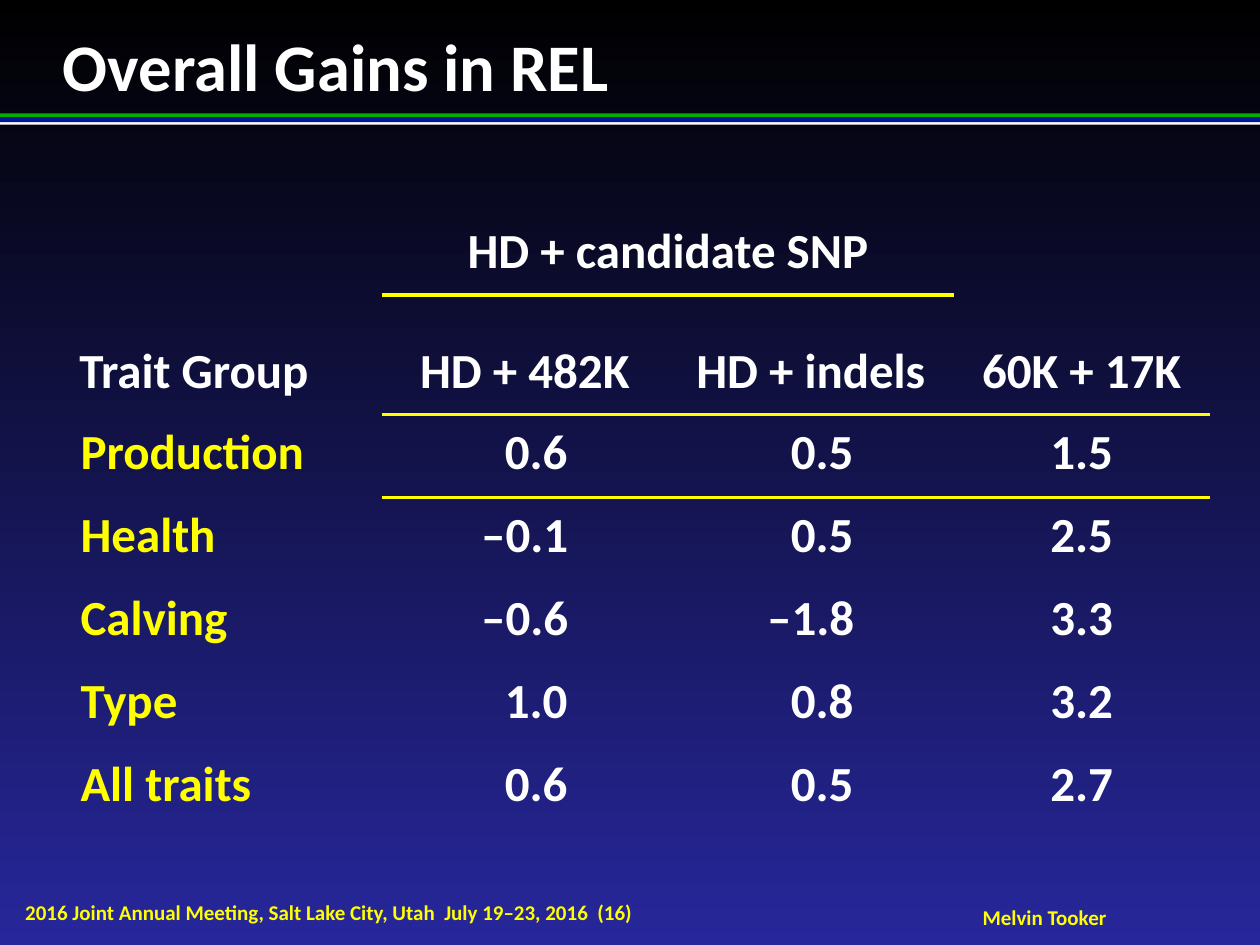
from dataclasses import dataclass

from lxml import etree
from pptx import Presentation
from pptx import util as u
from pptx.dml.color import RGBColor
from pptx.enum import shapes, text
from pptx.oxml import ns


@dataclass(frozen=True)
class Theme:
    font: str = "Calibri"
    white: str = "FFFFFF"
    yellow: str = "FFFF00"
    green: str = "01AF00"
    blue: str = "001799"
    top: str = "000000"
    bottom: str = "27279B"
    title: int = 38
    body: int = 28
    footer: int = 12


THEME = Theme()
LEFT, CENTER = text.PP_ALIGN.LEFT, text.PP_ALIGN.CENTER
MIDDLE, BOTTOM = text.MSO_ANCHOR.MIDDLE, text.MSO_ANCHOR.BOTTOM
NO_GRID_STYLE = "{2D5ABB26-0587-4C30-8999-92F81FD0307C}"
MINUS_SPACE = 0.18  # room left of unsigned values, so digits line up with signed ones

COLUMN_WIDTHS = [2.4, 2.27, 2.27, 2.03]
ROW_HEIGHTS = [0.79, 0.95] + [0.66] * 5
SUBHEADS = ["HD + 482K", "HD + indels", "60K + 17K"]
GAINS = [
    ("Production", "0.6", "0.5", "1.5"),
    ("Health", "–0.1", "0.5", "2.5"),
    ("Calving", "–0.6", "–1.8", "3.3"),
    ("Type", "1.0", "0.8", "3.2"),
    ("All traits", "0.6", "0.5", "2.7"),
]


def set_all(target, values):
    for name, value in values.items():
        setattr(target, name, value)


def margins(left=0, top=0, right=0, bottom=0):
    sides = {"left": left, "top": top, "right": right, "bottom": bottom}
    return {f"margin_{side}": u.Inches(size) for side, size in sides.items()}


def write(para, words, size, color, **para_format):
    set_all(para, para_format)
    span = para.add_run()
    span.text = words
    set_all(span.font, {"name": THEME.font, "size": u.Pt(size), "bold": True})
    span.font.color.rgb = RGBColor.from_string(color)


def add_background(page):
    fill = page.background.fill
    fill.gradient()
    fill.gradient_angle = 270
    for stop, position, color in zip(fill.gradient_stops, (0, 1), (THEME.top, THEME.bottom)):
        stop.position = position
        stop.color.rgb = RGBColor.from_string(color)


def add_stripe(page, top, height, color):
    stripe = page.shapes.add_shape(
        shapes.MSO_SHAPE.RECTANGLE, 0, u.Inches(top), u.Inches(10), u.Inches(height))
    stripe.shadow.inherit = False
    stripe.fill.solid()
    stripe.fill.fore_color.rgb = RGBColor.from_string(color)
    stripe.line.fill.background()


def add_label(page, place, words, size, color, align=LEFT, anchor=MIDDLE, wrap=True):
    box = page.shapes.add_textbox(*(u.Inches(length) for length in place))
    frame = box.text_frame
    set_all(frame, {"word_wrap": wrap, "vertical_anchor": anchor, **margins()})
    write(frame.paragraphs[0], words, size, color, alignment=align)


def fill_cell(cell, words, color=THEME.white, align=CENTER, anchor=MIDDLE, spacing=23, **inset):
    set_all(cell, {"vertical_anchor": anchor, **margins(**inset)})
    write(cell.text_frame.paragraphs[0], words, THEME.body, color,
          alignment=align, line_spacing=u.Pt(spacing))


def add_border(cell, side):
    line = etree.Element(ns.qn(f"a:ln{side}"), w=str(u.Pt(2.25)))
    fill = etree.SubElement(line, ns.qn("a:solidFill"))
    etree.SubElement(fill, ns.qn("a:srgbClr"), val=THEME.yellow)
    cell._tc.get_or_add_tcPr().insert(0, line)


def add_rule(table, row, columns):
    """Draw a line under a row, shared with the cells below it."""
    for column in columns:
        add_border(table.cell(row, column), "B")
        add_border(table.cell(row + 1, column), "T")


def add_gains_table(page):
    frame = page.shapes.add_table(
        len(ROW_HEIGHTS), len(COLUMN_WIDTHS), u.Inches(0.63), u.Inches(1.55),
        u.Inches(sum(COLUMN_WIDTHS)), u.Inches(sum(ROW_HEIGHTS)))
    table = frame.table
    set_all(table, {"first_row": False, "horz_banding": False})
    table._tbl.tblPr.find(ns.qn("a:tableStyleId")).text = NO_GRID_STYLE
    for column, width in zip(table.columns, COLUMN_WIDTHS):
        column.width = u.Inches(width)
    for row, height in zip(table.rows, ROW_HEIGHTS):
        row.height = u.Inches(height)
    for cell in table.iter_cells():
        cell.fill.background()

    # Headings
    table.cell(0, 0).merge(table.cell(1, 0))
    table.cell(0, 1).merge(table.cell(0, 2))
    fill_cell(table.cell(0, 0), "Trait Group", align=LEFT, anchor=BOTTOM, bottom=0.1)
    fill_cell(table.cell(0, 1), "HD + candidate SNP", anchor=BOTTOM, bottom=0.1)
    for column, words in enumerate(SUBHEADS, 1):
        fill_cell(table.cell(1, column), words, anchor=BOTTOM,
                  spacing=27 if column == 3 else 23, top=0.1, bottom=0.1)

    # Trait rows
    for row, (trait, *values) in enumerate(GAINS, 2):
        fill_cell(table.cell(row, 0), trait, THEME.yellow, LEFT, left=0.01, top=0.1)
        for column, value in enumerate(values, 1):
            unsigned = column < 3 and not value.startswith("–")
            fill_cell(table.cell(row, column), value, top=0.1,
                      left=MINUS_SPACE if unsigned else 0)

    # Yellow rules
    add_rule(table, 0, (1, 2))
    add_rule(table, 1, (1, 2, 3))


def main():
    deck = Presentation()
    set_all(deck, {"slide_width": u.Inches(10), "slide_height": u.Inches(7.5)})
    page = deck.slides.add_slide(deck.slide_layouts[6])
    add_background(page)

    # Stripes under the title
    add_stripe(page, 0.9, 0.03, THEME.green)
    add_stripe(page, 0.96, 0.03, THEME.white)
    add_stripe(page, 0.93, 0.04, THEME.blue)

    # Footer
    add_label(page, (0.2, 7.14, 7.11, 0.2),
              "2016 Joint Annual Meeting, Salt Lake City, Utah  July 19–23, 2016  (16)",
              THEME.footer, THEME.yellow)
    add_label(page, (7.79, 7.18, 1, 0.2), "Melvin Tooker",
              THEME.footer, THEME.yellow, align=CENTER, wrap=False)

    # Title and table
    add_label(page, (0.5, 0.2, 9, 0.64), "Overall Gains in REL",
              THEME.title, THEME.white, anchor=text.MSO_ANCHOR.TOP)
    add_gains_table(page)
    deck.save("out.pptx")


if __name__ == "__main__":
    main()
